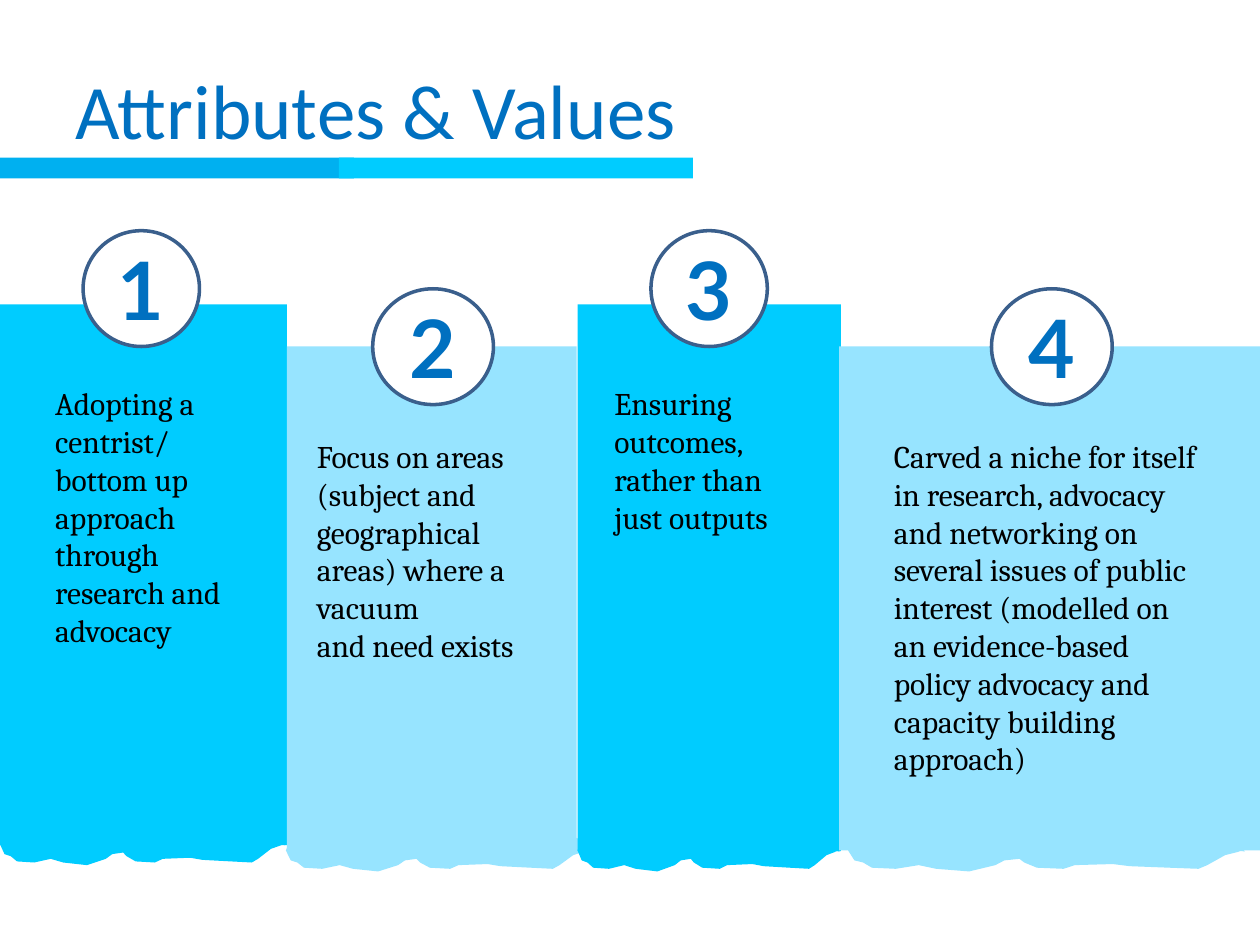
import pptx
import pptx.dml.color
import pptx.enum.shapes
import pptx.enum.text
import pptx.util

Pt = pptx.util.Pt
ShapeType = pptx.enum.shapes.MSO_SHAPE
Anchor = pptx.enum.text.MSO_ANCHOR
Align = pptx.enum.text.PP_ALIGN

TORN_EDGE = [
    (98.7, 62), (95, 69), (90.5, 88), (88.3, 95), (81, 93), (71, 90),
    (66.7, 86), (57.1, 88), (54.3, 95), (47.6, 93), (44.4, 83), (43.2, 76),
    (39.4, 79), (37.1, 88), (30.5, 100), (22.2, 95), (17.8, 88), (12, 95),
    (6, 93), (3.8, 83), (1.6, 79), (0, 60), (1.6, 38), (8.9, 21),
    (15.6, 19), (21.6, 12), (24.4, 10), (27.6, 2), (53, 0), (79.4, 2),
    (83, 5), (85.4, 12), (87.6, 17), (92, 26), (94.3, 33), (97, 38),
    (100, 62), (97, 60),
]

PANELS = [
    {
        "color": "00CCFF",
        "body": (0, 174, 164, 309),
        "edge": (0, 464.4, 163, 30),
        "badge": (47.5, 131.8, 66.5, 66.2),
        "note": (24.5, 216, 119.5, 160),
        "text": "Adopting a centrist/\vbottom up approach through research and advocacy",
    },
    {
        "color": "97E4FF",
        "body": (164, 198, 165.6, 288),
        "edge": (163.4, 468, 172.8, 30),
        "badge": (213, 165, 69, 66.2),
        "note": (174, 246.2, 141, 138),
        "text": "Focus on areas (subject and geographical areas) where a vacuum\nand need exists",
    },
    {
        "color": "00CCFF",
        "body": (330, 174, 150.5, 312.5),
        "edge": (330, 468, 149.8, 30),
        "badge": (372, 131.8, 66.5, 66.2),
        "note": (344, 216, 114, 94.5),
        "text": "Ensuring outcomes, rather than just outputs",
    },
    {
        "color": "97E4FF",
        "body": (479.5, 198, 240.5, 288),
        "edge": (484.6, 468, 226.8, 30),
        "badge": (566.6, 165, 69, 66.2),
        "note": (503.7, 246.2, 192.2, 225.5),
        "text": "Carved a niche for itself in research, advocacy and networking on "
                "several issues of public interest (modelled on an evidence-based "
                "policy advocacy and capacity building approach)",
    },
]


def color(value):
    return pptx.dml.color.RGBColor.from_string(value)


def write(text_frame, text, *, font, size, fill, bold=False,
          align=Align.LEFT, anchor=Anchor.TOP):
    text_frame.word_wrap = True
    text_frame.vertical_anchor = anchor
    text_frame.text = text
    for paragraph in text_frame.paragraphs:
        paragraph.alignment = align
        for run in paragraph.runs:
            run.font.name = font
            run.font.size = Pt(size)
            run.font.bold = bold
            run.font.color.rgb = color(fill)


class SlideBuilder:
    blue = "0070C0"
    outline = "3A5F8C"

    def __init__(self, slide):
        self.shapes = slide.shapes

    def paint(self, shape, fill):
        shape.shadow.inherit = False
        shape.fill.solid()
        shape.fill.fore_color.rgb = color(fill)
        shape.line.fill.background()

    def rectangle(self, box, fill):
        shape = self.shapes.add_shape(ShapeType.RECTANGLE, *map(Pt, box))
        self.paint(shape, fill)

    def torn_edge(self, box, fill):
        left, top, width, height = box
        points = [(Pt(left + width * x / 100), Pt(top + height * y / 100))
                  for x, y in TORN_EDGE]
        builder = self.shapes.build_freeform(*points[0])
        builder.add_line_segments(points[1:], close=True)
        self.paint(builder.convert_to_shape(), fill)

    def badge(self, box, number):
        shape = self.shapes.add_shape(ShapeType.OVAL, *map(Pt, box))
        self.paint(shape, "FFFFFF")
        shape.line.color.rgb = color(self.outline)
        shape.line.width = Pt(2)
        frame = shape.text_frame
        frame.margin_left = frame.margin_right = 0
        frame.margin_top = frame.margin_bottom = 0
        write(frame, str(number), font="Lato", size=46, fill=self.blue,
              bold=True, align=Align.CENTER, anchor=Anchor.MIDDLE)

    def text(self, box, text, **style):
        shape = self.shapes.add_textbox(*map(Pt, box))
        write(shape.text_frame, text, **style)


def main():
    presentation = pptx.Presentation()
    presentation.slide_width = Pt(720)
    presentation.slide_height = Pt(540)
    slide = presentation.slides.add_slide(presentation.slide_layouts[6])
    builder = SlideBuilder(slide)

    builder.text((36, 21.6, 383.8, 80.6), "Attributes & Values", font="Calibri",
                 size=44, fill=builder.blue, anchor=Anchor.MIDDLE)
    builder.rectangle((0, 90, 202.3, 12), "00B0F0")
    builder.rectangle((193.7, 90, 202.3, 12), "00CCFF")

    for number, panel in enumerate(PANELS, start=1):
        builder.rectangle(panel["body"], panel["color"])
        builder.torn_edge(panel["edge"], panel["color"])
        builder.badge(panel["badge"], number)
        builder.text(panel["note"], panel["text"], font="Cambria",
                     size=18, fill="000000")

    presentation.save("out.pptx")


if __name__ == "__main__":
    main()
